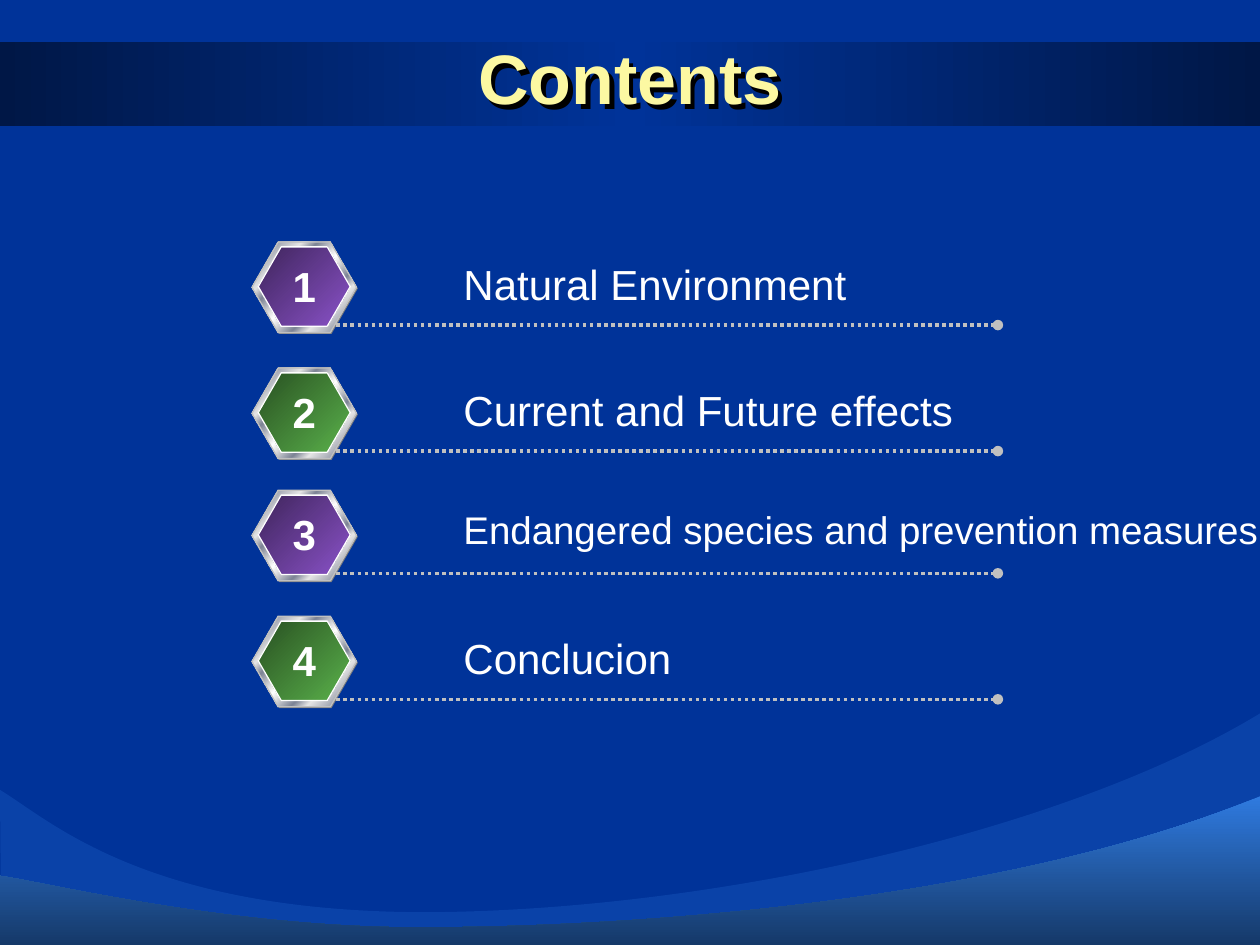
from lxml import etree
from pptx import Presentation
from pptx.dml.color import RGBColor
from pptx.enum.dml import MSO_LINE
from pptx.enum.shapes import MSO_CONNECTOR, MSO_SHAPE
from pptx.enum.text import MSO_ANCHOR, MSO_AUTO_SIZE, PP_ALIGN
from pptx.oxml.ns import qn
from pptx.util import Inches, Pt

HEXAGON, RECTANGLE = MSO_SHAPE.HEXAGON, MSO_SHAPE.RECTANGLE
LEFT, CENTER = PP_ALIGN.LEFT, PP_ALIGN.CENTER
TOP, MIDDLE = MSO_ANCHOR.TOP, MSO_ANCHOR.MIDDLE
FIT_TEXT, NO_FIT = MSO_AUTO_SIZE.SHAPE_TO_FIT_TEXT, MSO_AUTO_SIZE.NONE

# Content: row top, text size, text width, text height, label
TITLE = "Contents"
ROWS = [
    (1.92, 24, 3.27, 0.5, "Natural Environment"),
    (2.92, 24, 4.12, 0.5, "Current and Future effects"),
    (3.89, 22, 6.56, 0.47, "Endangered species and prevention measures"),
    (4.89, 24, 1.87, 0.91, "Conclucion"),
]

# Gradient stops: position, colour and, where darkened, shade in percent
NAVY, BRIGHT, SILVER, WHITE = "003399", "2F7ADF", "C0C0C0", "FFFFFF"
SHADE = 46.28
BAND = [(0, NAVY, SHADE), (50, NAVY), (100, NAVY, SHADE)]
HILL = [(0, BRIGHT), (100, BRIGHT, SHADE)]
PURPLE = [(0, "8A52C8", SHADE), (100, "8A52C8")]
GREEN = [(0, "5AB14B", SHADE), (100, "5AB14B")]
LIGHT, STEEL = "E6E6E6", "7D8496"
METAL = [(0, LIGHT), (7, STEEL), (26, LIGHT), (34, STEEL), (46, LIGHT), (50, WHITE),
         (54, LIGHT), (66, STEEL), (74, LIGHT), (93, STEEL), (100, LIGHT)]

# Swooshes: a start, then segments of one point (line) or three (Bezier curve)
BACK = [[(0.01, 7.51)], [(0, 6.27)],
        [(0.4, 6.51), (1.16, 7.25), (3.43, 7.24)],
        [(5.7, 7.22), (8.49, 6.59), (10.02, 5.65)], [(10.01, 7.51)]]
FRONT = [[(0, 7.52)], [(-0.01, 6.95)],
         [(0.36, 7), (1.86, 7.38), (3.46, 7.36)],
         [(5.06, 7.35), (7.97, 7.16), (10, 6.32)], [(10, 7.52)]]


def color(value):
    return RGBColor.from_string(value)


def add_element(parent, name, **attributes):
    return etree.SubElement(parent, qn(name), {k: str(v) for k, v in attributes.items()})


def paint(shape, fill, angle=0, line=None):
    """Fill with a colour or a list of gradient stops; outline if a colour is given."""
    shape.shadow.inherit = False
    if isinstance(fill, str):
        shape.fill.solid()
        shape.fill.fore_color.rgb = color(fill)
    else:
        shape.fill.gradient()
        gradient = shape._element.spPr.find(qn("a:gradFill"))
        for child in list(gradient):
            gradient.remove(child)
        stops = add_element(gradient, "a:gsLst")
        for position, value, *shade in fill:
            stop = add_element(stops, "a:gs", pos=position * 1000)
            tone = add_element(stop, "a:srgbClr", val=value)
            for percent in shade:
                add_element(tone, "a:gamma")
                add_element(tone, "a:shade", val=round(percent * 1000))
                add_element(tone, "a:invGamma")
        add_element(gradient, "a:lin", ang=angle * 60000, scaled=0)
    if line:
        shape.line.color.rgb = color(line)
        shape.line.width = Pt(0.75)
    else:
        shape.line.fill.background()


def add_text(text, left, top, width, height, size=24, ink=WHITE, bold=False,
             align=LEFT, anchor=TOP, wrap=False):
    box = page.shapes.add_textbox(*map(Inches, (left, top, width, height)))
    frame = box.text_frame
    frame.word_wrap = wrap
    frame.auto_size = NO_FIT if wrap else FIT_TEXT
    frame.vertical_anchor = anchor
    para = frame.paragraphs[0]
    para.alignment = align
    span = para.add_run()
    span.text = text
    span.font.name = "Arial"
    span.font.size = Pt(size)
    span.font.bold = bold
    span.font.color.rgb = color(ink)
    return box


def add_swoosh(segments):
    """Build the outline through the end points, then bend the curved segments."""
    ends = [(Inches(x), Inches(y)) for x, y in (segment[-1] for segment in segments)]
    builder = page.shapes.build_freeform(*ends[0])
    builder.add_line_segments(ends[1:], close=True)
    shape = builder.convert_to_shape()
    lines = list(shape._element.spPr.iter(qn("a:lnTo")))
    for line, segment in zip(lines, segments[1:]):
        if len(segment) == 3:
            curve = etree.Element(qn("a:cubicBezTo"))
            for x, y in segment:
                add_element(curve, "a:pt", x=Inches(x) - shape.left, y=Inches(y) - shape.top)
            line.getparent().replace(line, curve)
    return shape


def add_badge(top, face):
    """Hexagon made of a grey base, a metal rim and a coloured face."""
    group = page.shapes.add_group_shape()
    for left, shift, width, height, fill, line in [
            (2.01, 0.01, 0.83, 0.72, "808080", None),
            (2, 0, 0.83, 0.72, METAL, SILVER),
            (2.05, 0.04, 0.73, 0.63, face, WHITE)]:
        hexagon = group.shapes.add_shape(
            HEXAGON, *map(Inches, (left, top + shift, width, height)))
        hexagon.adjustments[0] = 0.289
        paint(hexagon, fill, 45, line)


def add_rule(y):
    """Dotted line ending in a dot."""
    rule = page.shapes.add_connector(
        MSO_CONNECTOR.STRAIGHT, *map(Inches, (2.67, y, 7.92, y)))
    rule.line.color.rgb = color(SILVER)
    rule.line.width = Pt(2)
    rule.line.dash_style = MSO_LINE.ROUND_DOT
    properties = rule._element.spPr
    add_element(properties.find(qn("a:ln")), "a:tailEnd", type="oval")
    add_element(properties, "a:effectLst")


deck = Presentation()
deck.slide_width, deck.slide_height = Inches(10), Inches(7.5)
page = deck.slides.add_slide(deck.slide_layouts[6])

# Background, title band and swooshes
page.background.fill.solid()
page.background.fill.fore_color.rgb = color(NAVY)
band = page.shapes.add_shape(RECTANGLE, *map(Inches, (0, 0.33, 10, 0.67)))
paint(band, BAND)
back = add_swoosh(BACK)
paint(back, BRIGHT)
add_element(back._element.spPr.find(qn("a:solidFill"))[0], "a:alpha", val=22000)
paint(add_swoosh(FRONT), HILL, 90)

# Title with a black shadow
title = add_text(TITLE, 0.5, 0.3, 9, 0.62, size=40, ink="FCF8A2", bold=True,
                 align=CENTER, anchor=MIDDLE, wrap=True)
effects = add_element(title._element.spPr, "a:effectLst")
shadow = add_element(effects, "a:outerShdw", dist=Inches(0.05), dir=45 * 60000)
add_element(shadow, "a:srgbClr", val="000000")

# Numbered rows, alternating colours
for number, (top, size, width, height, label) in enumerate(ROWS, 1):
    add_badge(top, PURPLE if number % 2 else GREEN)
    add_rule(top + 0.66)
    add_text(label, 3.58, top + 0.08, width, height, size=size)
    add_text(str(number), 2.22, top + 0.1, 0.39, 0.5, bold=True, align=CENTER)

deck.save("out.pptx")
